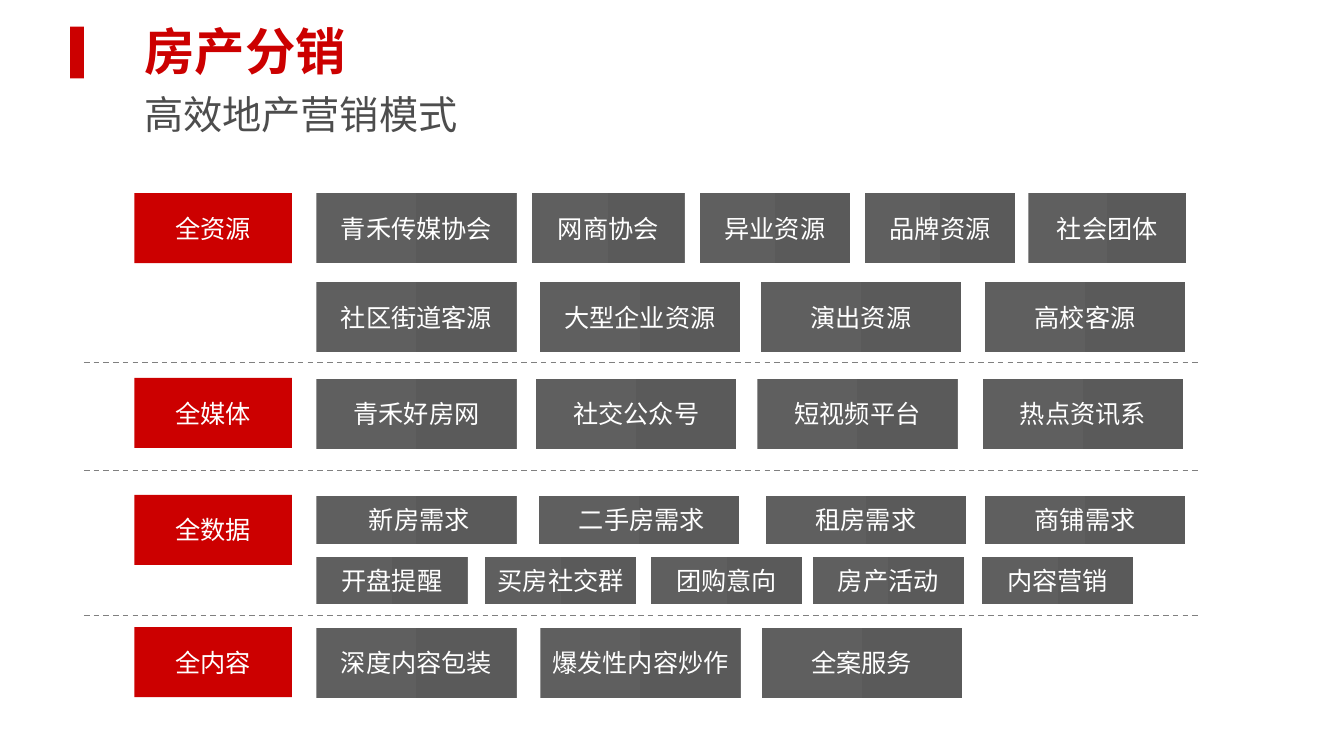
from lxml.etree import SubElement
from pptx import Presentation
from pptx.dml.color import RGBColor
from pptx.enum.dml import MSO_LINE_DASH_STYLE as Dash
from pptx.enum.shapes import MSO_CONNECTOR as Link, MSO_SHAPE as Kind
from pptx.enum.text import MSO_ANCHOR as Anchor, MSO_AUTO_SIZE as Fit, PP_ALIGN as Align
from pptx.oxml.ns import qn
from pptx.util import Pt

RED, WHITE, GREY, DARK = "CC0000", "FFFFFF", "808080", "4D4D4D"
FADE = ("5F5F5F", "5A5A5A")
FACE = "Noto Sans CJK SC"


def tint(code):
    return RGBColor.from_string(code)


class Board:
    """Holds the slide and the style of its elements."""

    def __init__(self, slide):
        self.slide = slide
        self.shapes = slide.shapes

    def letter(self, shape, text, size, color, bold=False, align=Align.LEFT,
               anchor=Anchor.TOP, fit=Fit.NONE):
        """Put one line of formatted text into a shape."""
        frame = shape.text_frame
        look = {"word_wrap": False, "auto_size": fit, "vertical_anchor": anchor,
                "margin_left": Pt(7.2), "margin_right": Pt(7.2),
                "margin_top": Pt(3.6), "margin_bottom": Pt(3.6)}
        for key, val in look.items():
            setattr(frame, key, val)
        par = frame.paragraphs[0]
        for key, val in {"alignment": align, "space_before": Pt(0)}.items():
            setattr(par, key, val)
        run = par.add_run()
        run.text = text
        for key, val in {"name": FACE, "size": Pt(size), "bold": bold}.items():
            setattr(run.font, key, val)
        run.font.color.rgb = tint(color)
        SubElement(run.font._element, qn("a:ea"), typeface=FACE)

    def title(self, text, x, y, w, h):
        shape = self.shapes.title
        for key, val in {"left": x, "top": y, "width": w, "height": h}.items():
            setattr(shape, key, Pt(val))
        self.letter(shape, text, 36, RED, bold=True, fit=Fit.SHAPE_TO_FIT_TEXT)

    def label(self, text, x, y, w, h):
        shape = self.shapes.add_textbox(Pt(x), Pt(y), Pt(w), Pt(h))
        self.letter(shape, text, 28, DARK, fit=Fit.SHAPE_TO_FIT_TEXT)

    def block(self, x, y, w, h, text="", fade=None):
        shape = self.shapes.add_shape(Kind.RECTANGLE, Pt(x), Pt(y), Pt(w), Pt(h))
        shape.shadow.inherit = False
        shape.line.fill.background()
        if fade:
            shape.fill.gradient()
            shape.fill.gradient_angle = 0
            for stop, code, pos in zip(shape.fill.gradient_stops, fade, (0, 1)):
                stop.color.rgb = tint(code)
                stop.position = pos
        else:
            shape.fill.solid()
            shape.fill.fore_color.rgb = tint(RED)
        if text:
            self.letter(shape, text, 18, WHITE, align=Align.CENTER, anchor=Anchor.MIDDLE)

    def row(self, y, h, lefts, widths, names):
        for x, w, name in zip(lefts, widths, names):
            self.block(x, y, w, h, name, FADE)

    def rule(self, y):
        line = self.shapes.add_connector(Link.STRAIGHT, Pt(60), Pt(y), Pt(857), Pt(y))
        line.line.color.rgb = tint(GREY)
        for key, val in {"width": Pt(1), "dash_style": Dash.DASH}.items():
            setattr(line.line, key, val)
        SubElement(line._element.spPr, qn("a:effectLst"))


GROUPS = [("全资源", 138), ("全媒体", 270), ("全数据", 353.5), ("全内容", 448)]
WIDE, SLIM = [143] * 4, [108] * 5
ROWS = [
    (138, 50, (226, 380, 500, 618, 734.5), (143, 109, 107, 107, 113),
     ("青禾传媒协会", "网商协会", "异业资源", "品牌资源", "社会团体")),
    (201.5, 50, (226, 385.5, 543.5, 703.5), WIDE,
     ("社区街道客源", "大型企业资源", "演出资源", "高校客源")),
    (270.5, 50, (226, 383, 541, 702), WIDE,
     ("青禾好房网", "社交公众号", "短视频平台", "热点资讯系")),
    (354, 34.5, (226, 385, 547, 703.5), WIDE,
     (" 新房需求", " 二手房需求", "租房需求", "商铺需求")),
    (397.5, 34, (226, 346.5, 465, 580.5, 701.5), SLIM,
     ("开盘提醒", "买房社交群", "团购意向", "房产活动", "内容营销")),
    (448.5, 50, (226, 386, 544), WIDE,
     ("深度内容包装", "爆发性内容炒作", "全案服务")),
]


def main():
    deck = Presentation()
    deck.slide_width, deck.slide_height = Pt(960), Pt(540)
    board = Board(deck.slides.add_slide(deck.slide_layouts[5]))
    board.title("房产分销", 96, 11, 158.5, 51)
    board.block(50, 19, 10, 37)
    board.label("高效地产营销模式", 96, 61, 238.5, 41)
    for name, y in GROUPS:
        board.block(96, y, 112.5, 50, name)
    for row in ROWS:
        board.row(*row)
    for y in (259, 336, 439.5):
        board.rule(y)
    deck.save("out.pptx")


if __name__ == "__main__":
    main()
